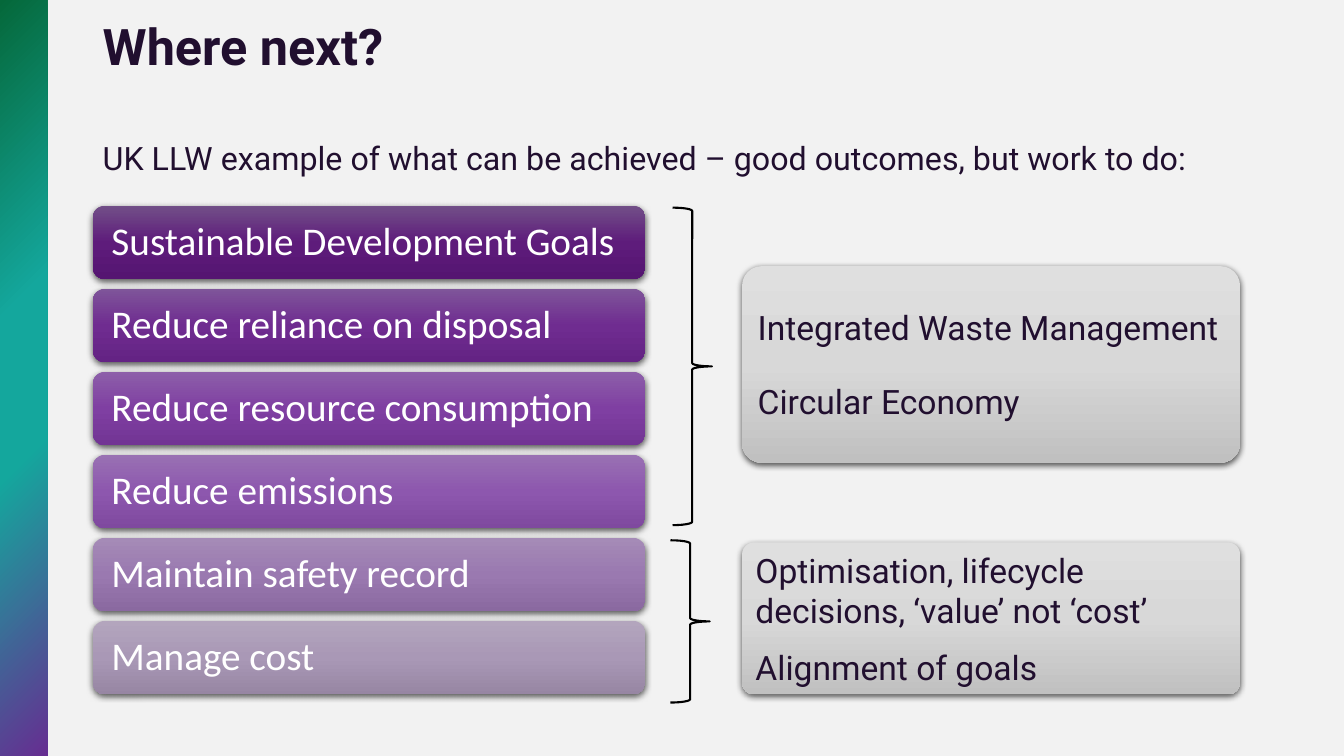
from lxml import etree
from pptx import Presentation
from pptx.dml.color import RGBColor
from pptx.enum.shapes import MSO_SHAPE
from pptx.enum.text import MSO_ANCHOR, PP_ALIGN
from pptx.oxml.ns import qn
from pptx.util import Inches, Pt

RECT = MSO_SHAPE.RECTANGLE
ROUND = MSO_SHAPE.ROUNDED_RECTANGLE
BRACE = MSO_SHAPE.RIGHT_BRACE
TOP, MID = MSO_ANCHOR.TOP, MSO_ANCHOR.MIDDLE
LEFT = PP_ALIGN.LEFT

PAPER = RGBColor(0xF2, 0xF2, 0xF2)
INK = RGBColor(0x21, 0x0F, 0x2F)
WHITE = RGBColor(0xFF, 0xFF, 0xFF)
BLACK = RGBColor(0x00, 0x00, 0x00)
PURPLE = RGBColor(0x66, 0x2E, 0x91)
TEAL = RGBColor(0x14, 0xA7, 0x9D)
GREEN = RGBColor(0x05, 0x68, 0x3A)
GREYS = (RGBColor(0xDF, 0xDF, 0xDF), RGBColor(0xD8, 0xD8, 0xD8), RGBColor(0xC0, 0xC0, 0xC0))

GOALS = [
    ("Sustainable Development Goals",
     (RGBColor(0x72, 0x4F, 0x88), RGBColor(0x5E, 0x1C, 0x7B), RGBColor(0x55, 0x15, 0x71))),
    ("Reduce reliance on disposal",
     (RGBColor(0x7F, 0x55, 0x9A), RGBColor(0x6F, 0x2C, 0x90), RGBColor(0x64, 0x23, 0x84))),
    ("Reduce resource consumption",
     (RGBColor(0x8D, 0x5F, 0xA9), RGBColor(0x7F, 0x3F, 0xA2), RGBColor(0x72, 0x34, 0x94))),
    ("Reduce emissions",
     (RGBColor(0x99, 0x71, 0xB3), RGBColor(0x8D, 0x57, 0xAE), RGBColor(0x7F, 0x49, 0x9F))),
    ("Maintain safety record",
     (RGBColor(0xA5, 0x8B, 0xB7), RGBColor(0x9A, 0x79, 0xB0), RGBColor(0x8A, 0x69, 0xA0))),
    ("Manage cost",
     (RGBColor(0xB3, 0xA5, 0xBD), RGBColor(0xA9, 0x98, 0xB6), RGBColor(0x97, 0x86, 0xA3))),
]


def add(node, tag, **attrs):
    """Append a DrawingML child element and return it."""
    return etree.SubElement(node, qn("a:" + tag), {k: str(v) for k, v in attrs.items()})


class Deck:
    font = "Roboto"

    def __init__(self):
        self.prs = Presentation()
        self.prs.slide_width, self.prs.slide_height = Inches(13.33), Inches(7.5)
        self.slide = self.prs.slides.add_slide(self.prs.slide_layouts[6])
        fill = self.slide.background.fill
        fill.solid()
        fill.fore_color.rgb = PAPER

    def shape(self, kind, box):
        shape = self.slide.shapes.add_shape(kind, *map(Inches, box))
        shape.shadow.inherit = False
        return shape

    def blend(self, shape, stops):
        """Give a shape gradient stops and no outline; return the gradient."""
        grad = etree.Element(qn("a:gradFill"), rotWithShape="1")
        shape._element.spPr.find(qn("a:prstGeom")).addnext(grad)
        items = add(grad, "gsLst")
        for pos, color in stops:
            add(add(items, "gs", pos=pos * 1000), "srgbClr", val=color)
        shape.line.fill.background()
        return grad

    def strip(self, box, stops):
        grad = self.blend(self.shape(RECT, box), stops)
        add(add(grad, "path", path="circle"), "fillToRect", l=100000, t=100000)

    def label(self, shape, lines, size, color=INK, font=font, bold=False,
              anchor=MID, gap=0, pitch=1.0):
        frame = shape.text_frame
        frame.word_wrap = True
        frame.vertical_anchor = anchor
        frame.text = "\n".join(lines)
        for i, para in enumerate(frame.paragraphs):
            para.alignment = LEFT
            para.line_spacing = pitch
            para.space_before = Pt(gap if i else 0)
            para.space_after = Pt(gap)
            face = para.runs[0].font
            face.name, face.size, face.bold = font, Pt(size), bold
            face.color.rgb = color

    def text(self, box, line, size, **style):
        self.label(self.slide.shapes.add_textbox(*map(Inches, box)), [line], size,
                   pitch=0.9, **style)

    def card(self, box, colors, lines, size, round_by=None, inset=0.1, **style):
        """Add a raised, rounded panel with text."""
        shape = self.shape(ROUND, box)
        if round_by:
            shape.adjustments[0] = round_by
        grad = self.blend(shape, zip((0, 50, 100), colors))
        add(grad, "lin", ang=5400000, scaled=0)
        glow = add(shape._element.spPr.find(qn("a:effectLst")), "outerShdw",
                   blurRad=Pt(4.5), dist=Pt(1.5), dir=5400000, rotWithShape=0)
        add(add(glow, "srgbClr", val=BLACK), "alpha", val=63000)
        frame = shape.text_frame
        frame.margin_left = frame.margin_right = Inches(inset)
        self.label(shape, lines, size, **style)

    def brace(self, box):
        shape = self.shape(BRACE, box)
        shape.fill.background()
        shape.line.color.rgb = BLACK
        shape.line.width = Pt(1.5)


def main():
    deck = Deck()
    deck.strip((0, 0, 0.47, 7.5), [(0, PURPLE), (40, TEAL), (60, TEAL), (100, GREEN)])
    deck.text((0.92, 0.15, 9.47, 0.68), "Where next?", 36, bold=True)
    deck.text((0.92, 1.37, 11.5, 0.5),
              "UK LLW example of what can be achieved – good outcomes, but work to do:",
              23, anchor=TOP)

    for i, (goal, colors) in enumerate(GOALS):
        deck.card((0.92, 2.04 + i * 0.824, 5.48, 0.73), colors, [goal], 28,
                  inset=0.15, color=WHITE, font="Calibri", pitch=0.9)

    deck.card((7.36, 2.64, 4.94, 1.95), GREYS,
              ["Integrated Waste Management", "Circular Economy"],
              24, round_by=0.1, gap=12)
    deck.card((7.36, 5.38, 4.94, 1.51), GREYS,
              ["Optimisation, lifecycle decisions, ‘value’ not ‘cost’", "Alignment of goals"],
              24, round_by=0.08, gap=6)
    deck.brace((6.67, 2.06, 0.39, 3.15))
    deck.brace((6.65, 5.36, 0.39, 1.61))
    deck.prs.save("out.pptx")


if __name__ == "__main__":
    main()
